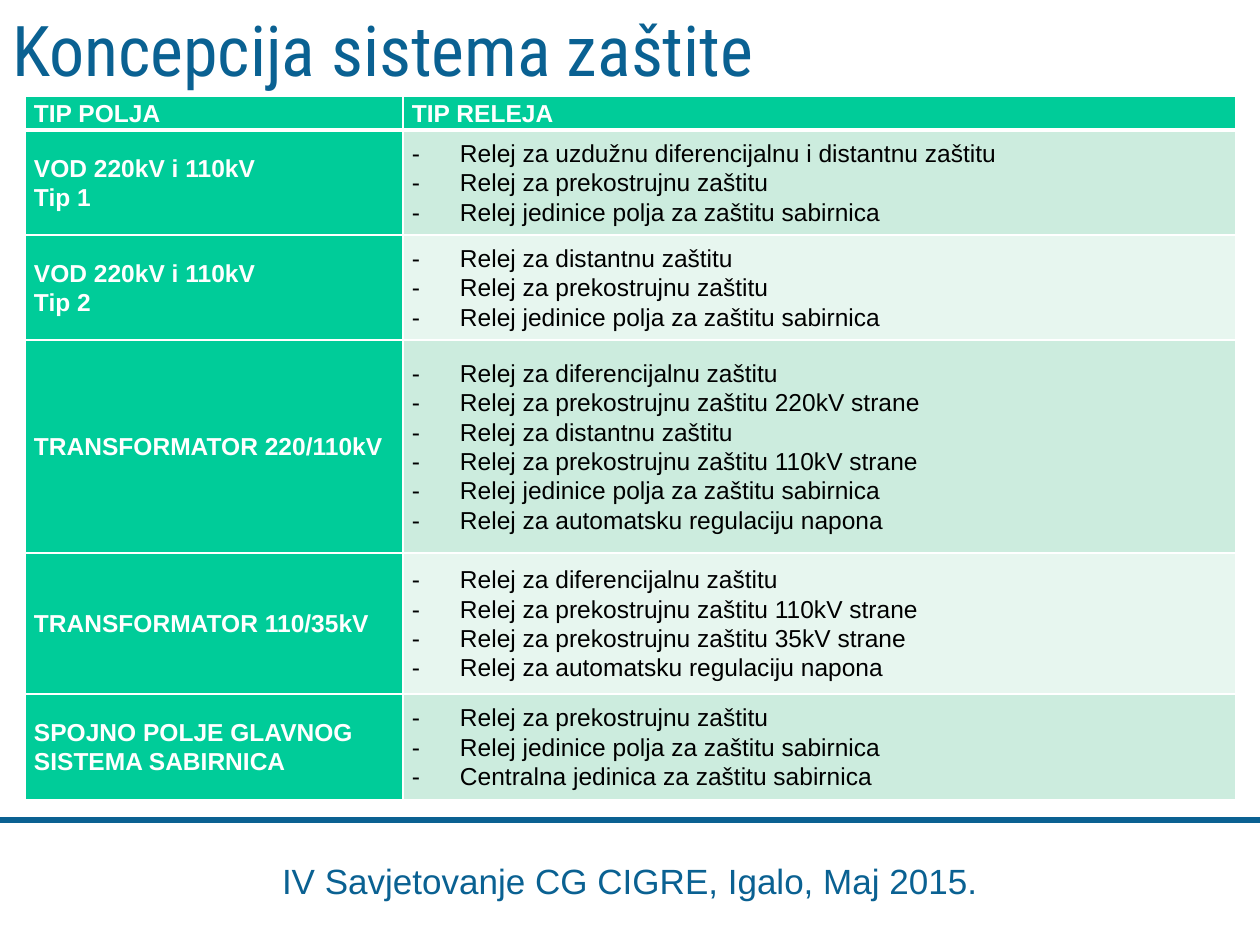
import pptx
import pptx.util
import pptx.dml.color
import pptx.enum.text
import pptx.enum.shapes
import pptx.oxml.ns
import lxml.etree

RGB = pptx.dml.color.RGBColor
BLUE = RGB(0x0A, 0x61, 0x92)
GREEN = RGB(0x00, 0xCC, 0x99)
MINT = RGB(0xCC, 0xEC, 0xDE)
PALE = RGB(0xE7, 0xF6, 0xEF)
WHITE = RGB(0xFF, 0xFF, 0xFF)
BLACK = RGB(0, 0, 0)
ALIGN = pptx.enum.text.PP_ALIGN

# Content
TITLE = "Koncepcija sistema zaštite"
FOOTER = "IV Savjetovanje CG CIGRE, Igalo, Maj 2015."
HEAD = ("TIP POLJA", "TIP RELEJA")
OVER = "Relej za prekostrujnu zaštitu"
DIFF = "Relej za diferencijalnu zaštitu"
DIST = "Relej za distantnu zaštitu"
BAY = "Relej jedinice polja za zaštitu sabirnica"
AUTO = "Relej za automatsku regulaciju napona"
BODY = [
    (["VOD 220kV i 110kV", "Tip 1"],
     ["Relej za uzdužnu diferencijalnu i distantnu zaštitu", OVER, BAY]),
    (["VOD 220kV i 110kV", "Tip 2"], [DIST, OVER, BAY]),
    (["TRANSFORMATOR 220/110kV"],
     [DIFF, OVER + " 220kV strane", DIST, OVER + " 110kV strane", BAY, AUTO]),
    (["TRANSFORMATOR 110/35kV"],
     [DIFF, OVER + " 110kV strane", OVER + " 35kV strane", AUTO]),
    (["SPOJNO POLJE GLAVNOG SISTEMA SABIRNICA"],
     [OVER, BAY, "Centralna jedinica za zaštitu sabirnica"]),
]
COLS = (378, 833)
ROWS = (34, 105, 105, 213, 141, 106)
WIDE, HIGH = 1260, 945


def px(n):
    return pptx.util.Emu(n * 914400 // 126)


def add_sub(node, tag, **attrs):
    return lxml.etree.SubElement(node, pptx.oxml.ns.qn(tag), attrs)


def write(frame, lines, size=14, color=BLACK, bold=False, font="Arial",
          align=ALIGN.LEFT, space=None, dash=False):
    frame.word_wrap = True
    for i, line in enumerate(lines):
        para = frame.paragraphs[0] if i == 0 else frame.add_paragraph()
        if dash:
            props = para._p.get_or_add_pPr()
            props.set("marL", str(px(48)))
            props.set("indent", str(-px(48)))
            add_sub(props, "a:buFont", typeface="Arial")
            add_sub(props, "a:buChar", char="-")
        para.alignment = align
        if space:
            para.line_spacing = space
        run = para.add_run()
        run.text = line
        run.font.size = pptx.util.Pt(size)
        run.font.name = font
        run.font.bold = bold
        run.font.color.rgb = color


def border(cell, **widths):
    props = cell._tc.get_or_add_tcPr()
    for side in "LRTB":
        line = add_sub(props, "a:ln" + side,
                       w=str(pptx.util.Pt(widths.get(side, 1))))
        fill = add_sub(line, "a:solidFill")
        add_sub(fill, "a:srgbClr", val=str(WHITE))


def fill_cell(cell, lines, back, widths, **style):
    cell.margin_left = cell.margin_right = px(9)
    cell.margin_top = cell.margin_bottom = 0
    cell.vertical_anchor = pptx.enum.text.MSO_ANCHOR.MIDDLE
    border(cell, **widths)
    cell.fill.solid()
    cell.fill.fore_color.rgb = back
    write(cell.text_frame, lines, space=1.07, **style)


deck = pptx.Presentation()
deck.slide_width, deck.slide_height = px(WIDE), px(HIGH)
slide = deck.slides.add_slide(deck.slide_layouts[6])
shapes = slide.shapes

# Footer rule and text
rule = shapes.add_connector(pptx.enum.shapes.MSO_CONNECTOR.STRAIGHT,
                            px(WIDE), px(820), 0, px(820))
rule.line.color.rgb = BLUE
rule.line.width = pptx.util.Pt(3)
add_sub(rule._element.spPr, "a:effectLst")
foot = shapes.add_textbox(0, px(853), px(WIDE), px(55))
write(foot.text_frame, [FOOTER], size=20, color=BLUE, align=ALIGN.CENTER)

# Title
title = shapes.add_textbox(0, 0, px(WIDE), px(116))
write(title.text_frame, [TITLE], size=40, color=BLUE, font="Roboto Condensed")

# Table of bays and relays
grid = shapes.add_table(len(ROWS), len(COLS), px(25), px(96),
                        px(sum(COLS)), px(sum(ROWS))).table
for col, wide in zip(grid.columns, COLS):
    col.width = px(wide)
for row, high in zip(grid.rows, ROWS):
    row.height = px(high)
for c, label in enumerate(HEAD):
    fill_cell(grid.cell(0, c), [label], GREEN, {"B": 3},
              color=WHITE, bold=True, align=ALIGN.JUSTIFY)
for r, (bay, relays) in enumerate(BODY, 1):
    edge = {"T": 3} if r == 1 else {}
    last = r == len(BODY)
    fill_cell(grid.cell(r, 0), bay, GREEN, edge, color=WHITE, bold=True,
              align=ALIGN.LEFT if last else ALIGN.JUSTIFY)
    fill_cell(grid.cell(r, 1), relays, MINT if r % 2 else PALE, edge,
              align=ALIGN.JUSTIFY, dash=True)

deck.save("out.pptx")
